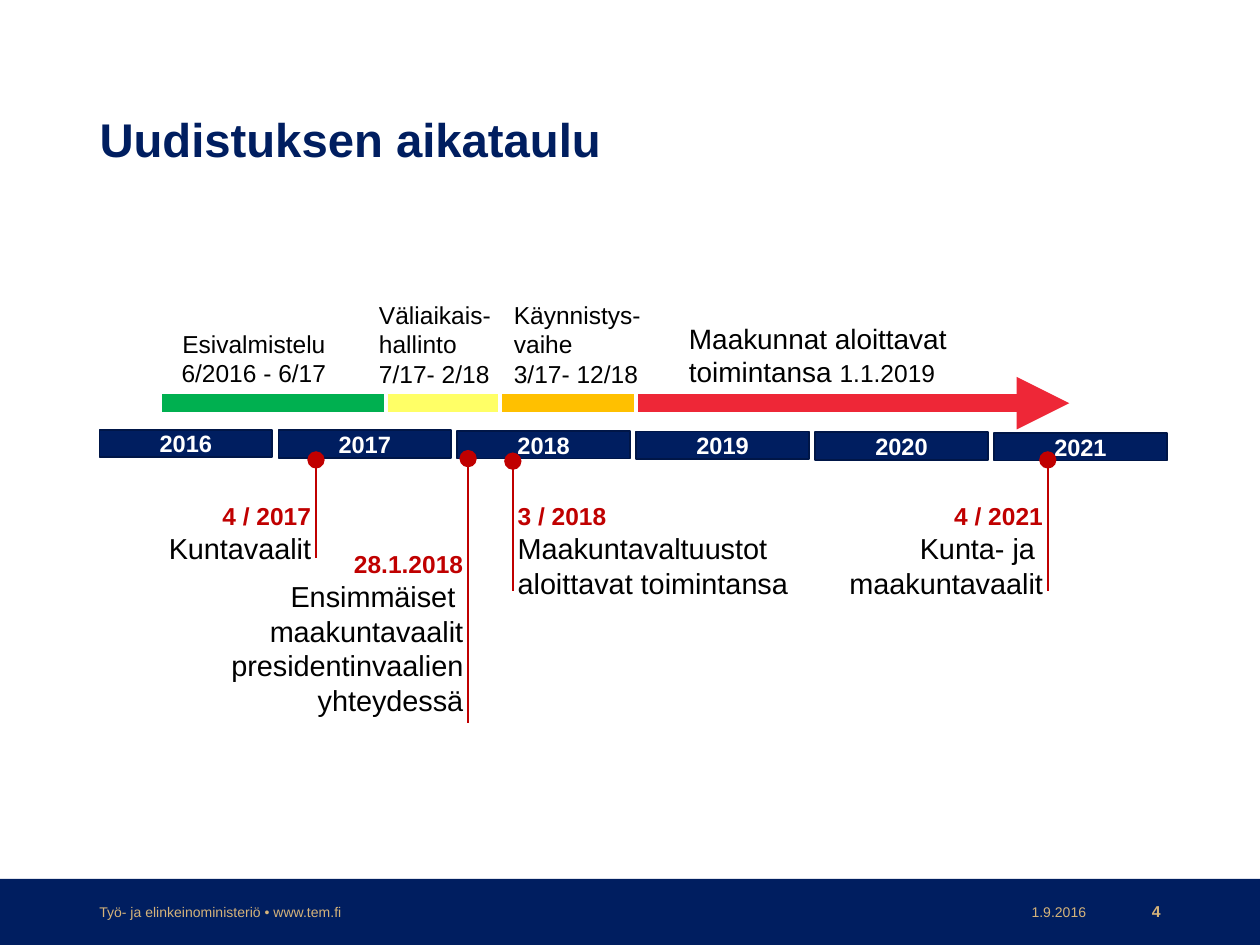
from dataclasses import dataclass

from lxml import etree
from pptx import Presentation
from pptx.dml.color import RGBColor
from pptx.enum.shapes import MSO_CONNECTOR, MSO_SHAPE
from pptx.enum.text import MSO_ANCHOR, MSO_AUTO_SIZE, PP_ALIGN
from pptx.oxml.ns import qn
from pptx.util import Inches, Pt

LEFT, CENTER, RIGHT = PP_ALIGN.LEFT, PP_ALIGN.CENTER, PP_ALIGN.RIGHT
MIDDLE = MSO_ANCHOR.MIDDLE
FIT_SHAPE, NO_FIT = MSO_AUTO_SIZE.SHAPE_TO_FIT_TEXT, MSO_AUTO_SIZE.NONE
STRAIGHT, RECTANGLE = MSO_CONNECTOR.STRAIGHT, MSO_SHAPE.RECTANGLE


@dataclass(frozen=True)
class Theme:
    font: str = "Arial"
    navy: str = "001E60"
    navy_edge: str = "001647"
    gold: str = "D5B37A"
    white: str = "FFFFFF"
    black: str = "000000"
    event: str = "C00000"
    green: str = "00B050"
    yellow: str = "FFFF66"
    orange: str = "FFC000"
    red: str = "EE2737"
    title_size: float = 27
    year_size: float = 13.5
    label_size: float = 14
    start_size: float = 16
    event_size: float = 16.5
    footer_size: float = 8
    number_size: float = 9


THEME = Theme()
WIDTH, HEIGHT = 10, 7.5

# Time grid: one column per year, rising very slightly to the right
GRID_LEFT, YEAR_STEP, YEAR_WIDTH = 0.79, 1.42, 1.37
YEAR_TOP, YEAR_HEIGHT, YEAR_DROP = 3.41, 0.22, 0.005
PHASE_Y = 3.2
EVENT_TEXT_GAP = 0.06


def column(years):
    """Horizontal place of a moment, in year columns from the first year."""
    return GRID_LEFT + years * YEAR_STEP


def color(value):
    return RGBColor.from_string(value)


def style_run(run, size, text_color, bold=False):
    run.font.name = THEME.font
    run.font.size = Pt(size)
    run.font.color.rgb = color(text_color)
    run.font.bold = bold


def style_paragraph(paragraph, size, text_color, bold=False, align=LEFT):
    paragraph.alignment = align
    for run in paragraph.runs:
        style_run(run, size, text_color, bold)


def add_text(slide, box, text, size, text_color=THEME.black, bold=False,
             align=LEFT, wrap=False, anchor=None, fit=FIT_SHAPE):
    shape = slide.shapes.add_textbox(*map(Inches, box))
    frame = shape.text_frame
    frame.word_wrap = wrap
    frame.auto_size = fit
    if anchor is not None:
        frame.vertical_anchor = anchor
    frame.text = text
    for paragraph in frame.paragraphs:
        style_paragraph(paragraph, size, text_color, bold, align)
    return frame


def add_bar(slide, box, edge=None, text=""):
    shape = slide.shapes.add_shape(RECTANGLE, *map(Inches, box))
    shape.shadow.inherit = False
    shape.fill.solid()
    shape.fill.fore_color.rgb = color(THEME.navy)
    if edge:
        shape.line.color.rgb = color(edge)
        shape.line.width = Pt(1)
    else:
        shape.line.fill.background()
    if text:
        frame = shape.text_frame
        frame.margin_top = frame.margin_bottom = 0
        frame.vertical_anchor = MIDDLE
        frame.text = text
        style_paragraph(frame.paragraphs[0], THEME.year_size, THEME.white, True, CENTER)


def add_line(slide, start, end, line_color, width, head=None, tail=None, end_size="med"):
    line = slide.shapes.add_connector(STRAIGHT, *map(Inches, (*start, *end)))
    line.line.color.rgb = color(line_color)
    line.line.width = Pt(width)
    outline = line.line._get_or_add_ln()
    for tag, kind in (("a:headEnd", head), ("a:tailEnd", tail)):
        if kind:
            etree.SubElement(outline, qn(tag), type=kind, w=end_size, len=end_size)
    etree.SubElement(line._element.spPr, qn("a:effectLst"))


def add_title(slide, text):
    title = slide.shapes.title
    title.left, title.top, title.width, title.height = map(Inches, (0.69, 0.58, 7.88, 1.09))
    frame = title.text_frame
    frame.text = text
    frame.vertical_anchor = MIDDLE
    frame.paragraphs[0].line_spacing = 0.9
    style_paragraph(frame.paragraphs[0], THEME.title_size, THEME.navy, True)


def add_footer(slide):
    band_top = HEIGHT * 0.93
    add_bar(slide, (0, band_top, WIDTH, HEIGHT - band_top))
    entries = (
        (0.69, 3.37, "Työ- ja elinkeinoministeriö •\u00a0www.tem.fi", THEME.footer_size, False, LEFT),
        (7.95, 0.77, "1.9.2016", THEME.footer_size, False, RIGHT),
        (8.72, 0.59, "4", THEME.number_size, True, RIGHT),
    )
    for left, width, text, size, bold, align in entries:
        add_text(slide, (left, 7.12, width, 0.23), text, size, THEME.gold, bold,
                 align, wrap=True, anchor=MIDDLE, fit=NO_FIT)


def add_event(slide, moment, top, bottom, box_top, width, height, align, date, lines):
    """A dated marker line with its text on the left or the right."""
    x = column(moment)
    add_line(slide, (x, top), (x, bottom), THEME.event, 1, head="oval", end_size="lg")
    left = x + EVENT_TEXT_GAP - width if align == RIGHT else x - EVENT_TEXT_GAP
    frame = add_text(slide, (left, box_top, width, height), "\n".join((date, *lines)),
                     THEME.event_size, align=align)
    style_paragraph(frame.paragraphs[0], THEME.label_size, THEME.event, True, align)


def main():
    presentation = Presentation()
    presentation.slide_width, presentation.slide_height = Inches(WIDTH), Inches(HEIGHT)
    slide = presentation.slides.add_slide(presentation.slide_layouts[5])

    add_footer(slide)
    add_title(slide, "Uudistuksen aikataulu")

    # Year bars
    for index, year in enumerate(range(2016, 2022)):
        top = YEAR_TOP + index * YEAR_DROP
        add_bar(slide, (column(index), top, YEAR_WIDTH, YEAR_HEIGHT), THEME.navy_edge, str(year))

    # Phases: start and end in year columns
    phases = (
        (0.35, 1.59, THEME.green, None),
        (1.61, 2.23, THEME.yellow, None),
        (2.25, 2.99, THEME.orange, None),
        (3.01, 5.42, THEME.red, "triangle"),
    )
    for start, end, phase_color, tail in phases:
        add_line(slide, (column(start), PHASE_Y), (column(end), PHASE_Y), phase_color, 10, tail=tail)

    # Phase labels
    labels = (
        ((1.34, 2.56, 1.35, 0.57), "Esivalmistelu\n6/2016 - 6/17", CENTER),
        ((2.91, 2.33, 1.14, 0.81), "Väliaikais-\nhallinto\n7/17- 2/18", LEFT),
        ((3.98, 2.33, 1.25, 0.81), "Käynnistys-\nvaihe\n3/17- 12/18", LEFT),
    )
    for box, text, align in labels:
        add_text(slide, box, text, THEME.label_size, align=align)
    frame = add_text(slide, (5.37, 2.5, 2.83, 0.64), "Maakunnat aloittavat toimintansa ",
                     THEME.start_size, wrap=True)
    date_run = frame.paragraphs[0].add_run()
    date_run.text = "1.1.2019"
    style_run(date_run, THEME.label_size, THEME.black)

    # Events: moment, line top and bottom, text box, date and lines
    events = (
        (1.21, 3.65, 4.43, 3.93, 1.34, 0.93, RIGHT, "4 / 2017", ("Kuntavaalit",)),
        (2.06, 3.64, 5.74, 4.31, 2.08, 1.75, RIGHT, "28.1.2018",
         ("Ensimmäiset ", "maakuntavaalit", "presidentinvaalien\vyhteydessä")),
        (2.31, 3.66, 4.69, 3.93, 2.4, 1.19, LEFT, "3 / 2018",
         ("Maakuntavaltuustot", "aloittavat toimintansa")),
        (5.3, 3.65, 4.69, 3.93, 1.75, 0.93, RIGHT, "4 / 2021", ("Kunta- ja \vmaakuntavaalit",)),
    )
    for event in events:
        add_event(slide, *event)

    presentation.save("out.pptx")


if __name__ == "__main__":
    main()
